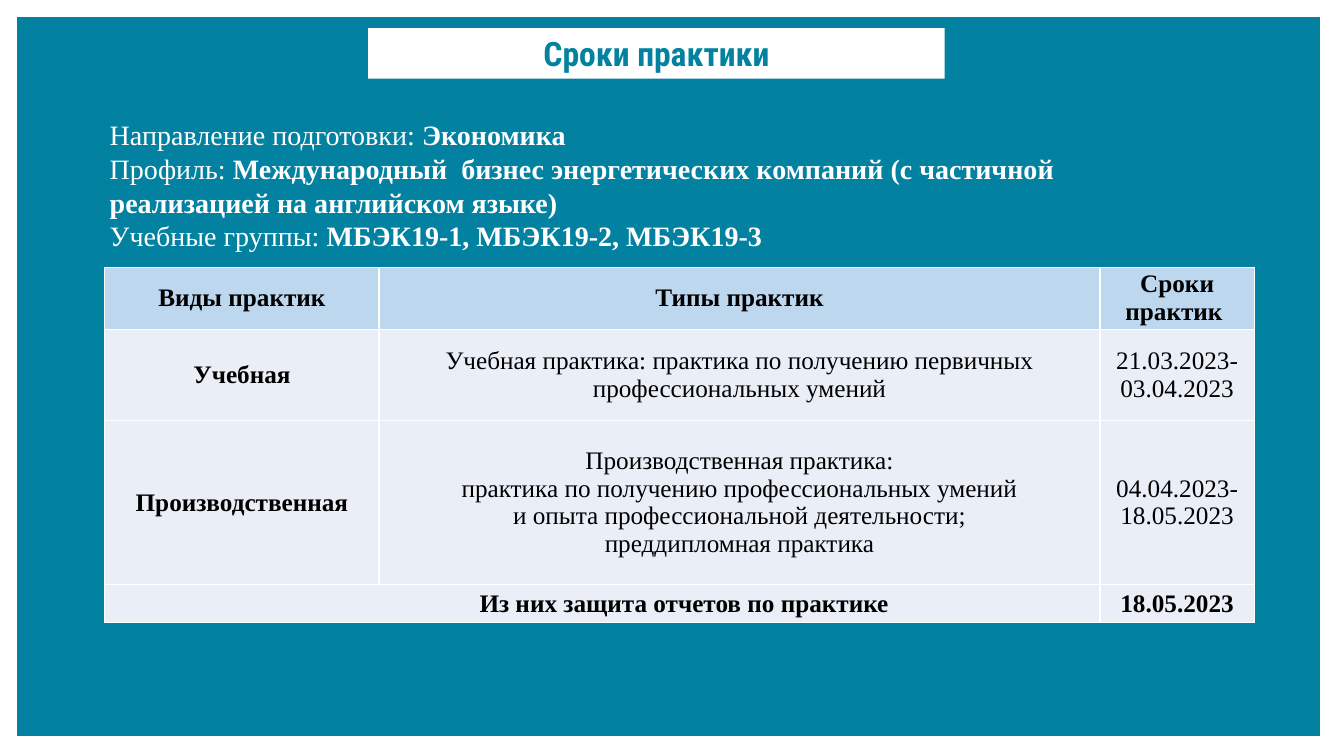
import pptx
import pptx.dml.color
import pptx.enum.shapes
import pptx.enum.text
import pptx.oxml
import pptx.oxml.ns
import pptx.util

RGB = pptx.dml.color.RGBColor
TEAL = RGB(0x02, 0x82, 0xA0)
WHITE = RGB(0xFF, 0xFF, 0xFF)
BLACK = RGB(0x00, 0x00, 0x00)
HEADER_BLUE = RGB(0xBD, 0xD7, 0xEE)
PALE_BLUE = RGB(0xEA, 0xEF, 0xF7)

TITLE = "Сроки практики"
# Each paragraph is a list of (text, bold) spans.
PROGRAMME = [
    [("Направление подготовки: ", False), ("Экономика", True)],
    [("Профиль: ", False),
     ("Международный  бизнес энергетических компаний "
      "(с частичной реализацией на английском языке)", True)],
    [("Учебные группы: ", False), ("МБЭК19-1, МБЭК19-2, МБЭК19-3", True)],
]
# Each cell is a list of lines.
SCHEDULE = [
    [["Виды практик"], ["Типы практик"], ["Сроки", "практик "]],
    [["Учебная"],
     ["Учебная практика: практика по получению первичных профессиональных умений"],
     ["21.03.2023-03.04.2023"]],
    [["Производственная"],
     ["Производственная практика:",
      "практика по получению профессиональных умений",
      "и опыта профессиональной деятельности;",
      "преддипломная практика"],
     ["04.04.2023-18.05.2023"]],
    [["Из них защита отчетов по практике"], [], ["18.05.2023"]],
]

# Lengths in px, 100 px to the inch
EMU_PER_PX = 9144
PAGE_SIZE = (1333, 750)
PANEL = (17, 17, 1292, 713)
TITLE_BAR = (365, 28, 572, 50)
PROGRAMME_BOX = (99, 112, 1040, 145)
TABLE_CORNER = (104, 265)
COLUMNS = (272, 715, 153)
ROWS = (62, 90, 163, 38)
CELL_INSET = 7
TOTAL_INDENT = 162

TITLE_FONT = {"name": "Roboto Condensed", "size": pptx.util.Pt(24), "bold": True}
PROGRAMME_FONT = {"name": "Times New Roman", "size": pptx.util.Pt(20)}
CELL_FONT = {"name": "Times New Roman", "size": pptx.util.Pt(18)}
CENTER = pptx.enum.text.PP_ALIGN.CENTER
MIDDLE = pptx.enum.text.MSO_ANCHOR.MIDDLE


def emu(*lengths):
    return [length * EMU_PER_PX for length in lengths]


def set_all(target, values):
    for name, value in values.items():
        setattr(target, name, value)


def write(frame, paragraphs, font, color, align=None):
    """Fill a text frame with paragraphs made of (text, bold) spans."""
    for index, spans in enumerate(paragraphs):
        para = frame.paragraphs[0] if index == 0 else frame.add_paragraph()
        para.alignment = align
        for text, bold in spans:
            span = para.add_run()
            span.text = text
            set_all(span.font, {**font, "bold": bold})
            span.font.color.rgb = color


def add_rectangle(page, place, color):
    box = page.shapes.add_shape(
        pptx.enum.shapes.MSO_SHAPE.RECTANGLE, *emu(*place))
    box.shadow.inherit = False
    box.fill.solid()
    box.fill.fore_color.rgb = color
    box.line.fill.background()
    return box


def add_borders(cell):
    properties = cell._tc.get_or_add_tcPr()
    for side in "LRTB":
        properties.append(pptx.oxml.parse_xml(
            f'<a:ln{side} {pptx.oxml.ns.nsdecls("a")} w="{pptx.util.Pt(1)}">'
            f'<a:solidFill><a:srgbClr val="{WHITE}"/></a:solidFill></a:ln{side}>'))


def add_schedule(page):
    place = emu(*TABLE_CORNER, sum(COLUMNS), sum(ROWS))
    table = page.shapes.add_table(len(ROWS), len(COLUMNS), *place).table
    for column, width in zip(table.columns, emu(*COLUMNS)):
        column.width = width
    for row, height in zip(table.rows, emu(*ROWS)):
        row.height = height

    last = len(ROWS) - 1
    inset, indent = emu(CELL_INSET, TOTAL_INDENT)
    for r, row in enumerate(SCHEDULE):
        for c, lines in enumerate(row):
            cell = table.cell(r, c)
            add_borders(cell)
            cell.fill.solid()
            cell.fill.fore_color.rgb = HEADER_BLUE if r == 0 else PALE_BLUE
            set_all(cell, {"vertical_anchor": MIDDLE, "margin_left": inset,
                           "margin_right": inset, "margin_top": 0,
                           "margin_bottom": 0})
            bold = r in (0, last) or c == 0
            write(cell.text_frame, [[(line, bold)] for line in lines],
                  CELL_FONT, BLACK, CENTER)

    total = table.cell(last, 0)
    total.merge(table.cell(last, 1))
    total.margin_left = inset + indent


def main():
    deck = pptx.Presentation()
    deck.slide_width, deck.slide_height = emu(*PAGE_SIZE)
    page = deck.slides.add_slide(deck.slide_layouts[6])

    add_rectangle(page, PANEL, TEAL)
    programme = page.shapes.add_textbox(*emu(*PROGRAMME_BOX)).text_frame
    programme.word_wrap = True
    write(programme, PROGRAMME, PROGRAMME_FONT, WHITE)
    add_schedule(page)
    title = add_rectangle(page, TITLE_BAR, WHITE).text_frame
    title.vertical_anchor = MIDDLE
    write(title, [[(TITLE, True)]], TITLE_FONT, TEAL, CENTER)

    deck.save("out.pptx")


if __name__ == "__main__":
    main()
